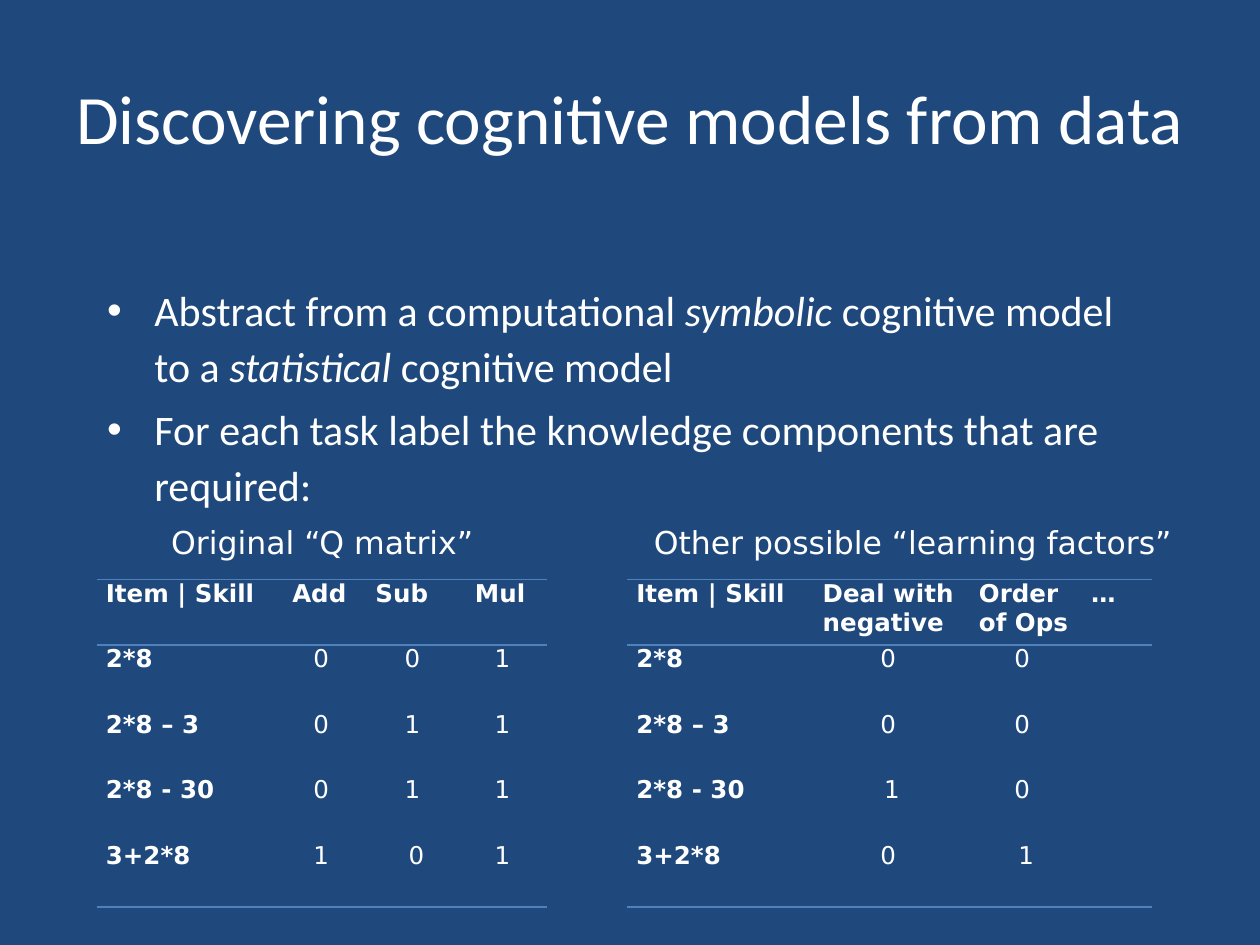
from lxml.etree import SubElement
from pptx import Presentation
from pptx.dml.color import RGBColor
from pptx.enum.text import MSO_ANCHOR, MSO_AUTO_SIZE, PP_ALIGN
from pptx.oxml.ns import qn
from pptx.util import Inches, Pt

NAVY = RGBColor(0x1F, 0x49, 0x7D)
BLUE = RGBColor(0x4F, 0x81, 0xBD)
WHITE = RGBColor(0xFF, 0xFF, 0xFF)
HEAD_FONT = "Calibri"
DATA_FONT = "DejaVu Sans"
NO_GRID_STYLE = "{2D5ABB26-0587-4C30-8999-92F81FD0307C}"
ROW_HEIGHT = 0.52


def add_run(p, text, size=14, font=DATA_FONT, color=WHITE, bold=False, italic=False):
    r = p.add_run()
    r.text = text
    r.font.size = Pt(size)
    r.font.name = font
    r.font.color.rgb = color
    r.font.bold = bold
    r.font.italic = italic


def set_borders(cell, ruled):
    """Rule the named sides of a cell and clear the others."""
    tc_pr = cell._tc.get_or_add_tcPr()
    for side in "LRTB":
        ln = SubElement(tc_pr, qn(f"a:ln{side}"), w=str(Pt(1)))
        if side in ruled:
            fill = SubElement(ln, qn("a:solidFill"))
            SubElement(fill, qn("a:srgbClr"), val=str(BLUE))
        else:
            SubElement(ln, qn("a:noFill"))


class SlideBuilder:
    def __init__(self, prs):
        self.s = prs.slides.add_slide(prs.slide_layouts[1])
        self.s.background.fill.solid()
        self.s.background.fill.fore_color.rgb = NAVY

    def place(self, sp, left, top, width, height):
        sp.left, sp.top = Inches(left), Inches(top)
        sp.width, sp.height = Inches(width), Inches(height)
        sp.text_frame.auto_size = MSO_AUTO_SIZE.NONE
        return sp.text_frame

    def title(self, text, *box):
        tf = self.place(self.s.shapes.title, *box)
        tf.vertical_anchor = MSO_ANCHOR.MIDDLE
        p = tf.paragraphs[0]
        p.alignment = PP_ALIGN.CENTER
        add_run(p, text, size=39.6, font=HEAD_FONT)

    def bullets(self, items, *box):
        """Each item is a list of runs; every second run is italic."""
        tf = self.place(self.s.placeholders[1], *box)
        for i, runs in enumerate(items):
            p = tf.add_paragraph() if i else tf.paragraphs[0]
            p.line_spacing = 1.1
            p.space_before = Pt(4.8 if i else 0)
            for j, text in enumerate(runs):
                add_run(p, text, size=24, font=HEAD_FONT, italic=j % 2 == 1)

    def caption(self, text, left, top, width, height):
        sp = self.s.shapes.add_textbox(
            Inches(left), Inches(top), Inches(width), Inches(height))
        tf = sp.text_frame
        tf.word_wrap = True
        tf.auto_size = MSO_AUTO_SIZE.SHAPE_TO_FIT_TEXT
        add_run(tf.paragraphs[0], text, size=18)

    def matrix(self, rows, widths, left, top):
        frame = self.s.shapes.add_table(
            len(rows), len(widths), Inches(left), Inches(top),
            Inches(sum(widths)), Inches(ROW_HEIGHT * len(rows)))
        table = frame.table
        table._tbl.tblPr.find(qn("a:tableStyleId")).text = NO_GRID_STYLE
        table.horz_banding = False
        for column, width in zip(table.columns, widths):
            column.width = Inches(width)
        sides = {0: "TB", 1: "T", len(rows) - 1: "B"}
        for i, row in enumerate(rows):
            table.rows[i].height = Inches(ROW_HEIGHT)
            for j, text in enumerate(row):
                cell = table.cell(i, j)
                cell.margin_left = cell.margin_right = Inches(0.07)
                cell.margin_top = cell.margin_bottom = 0
                set_borders(cell, sides.get(i, ""))
                cell.fill.background()
                label = i == 0 or j == 0
                p = cell.text_frame.paragraphs[0]
                p.alignment = PP_ALIGN.LEFT if label else PP_ALIGN.CENTER
                if text:
                    add_run(p, text, bold=label)


def main():
    prs = Presentation()
    prs.slide_width, prs.slide_height = Inches(10), Inches(7.5)
    slide = SlideBuilder(prs)

    # Title and introduction
    slide.title("Discovering cognitive models from data", 0.5, 0.3, 9, 1.25)
    slide.bullets([
        ["Abstract from a computational ", "symbolic ",
         "cognitive model to a ", "statistical", " cognitive model"],
        ["For each task label the knowledge components that are required:"],
    ], 0.75, 2.17, 8.5, 2.81)

    # Original skills
    slide.caption("Original “Q matrix”", 1.26, 4.1, 2.78, 0.4)
    slide.matrix([
        ["Item | Skill", "Add", "Sub", "Mul"],
        ["2*8", "0 ", "0 ", "1 "],
        ["2*8 – 3", "0 ", "1 ", "1 "],
        ["2*8 - 30", "0 ", "1 ", "1 "],
        ["3+2*8", "1 ", "0", "1 "],
    ], [1.48, 0.66, 0.79, 0.64], 0.77, 4.6)

    # Further factors
    slide.caption("Other possible “learning factors”", 5.09, 4.1, 4.35, 0.4)
    slide.matrix([
        ["Item | Skill", "Deal with negative", "Order of Ops", "…"],
        ["2*8", "0 ", "0 ", ""],
        ["2*8 – 3", "0 ", "0 ", ""],
        ["2*8 - 30", "1", "0 ", ""],
        ["3+2*8", "0 ", "1", ""],
    ], [1.48, 1.24, 0.89, 0.55], 4.98, 4.6)

    prs.save("out.pptx")


if __name__ == "__main__":
    main()
